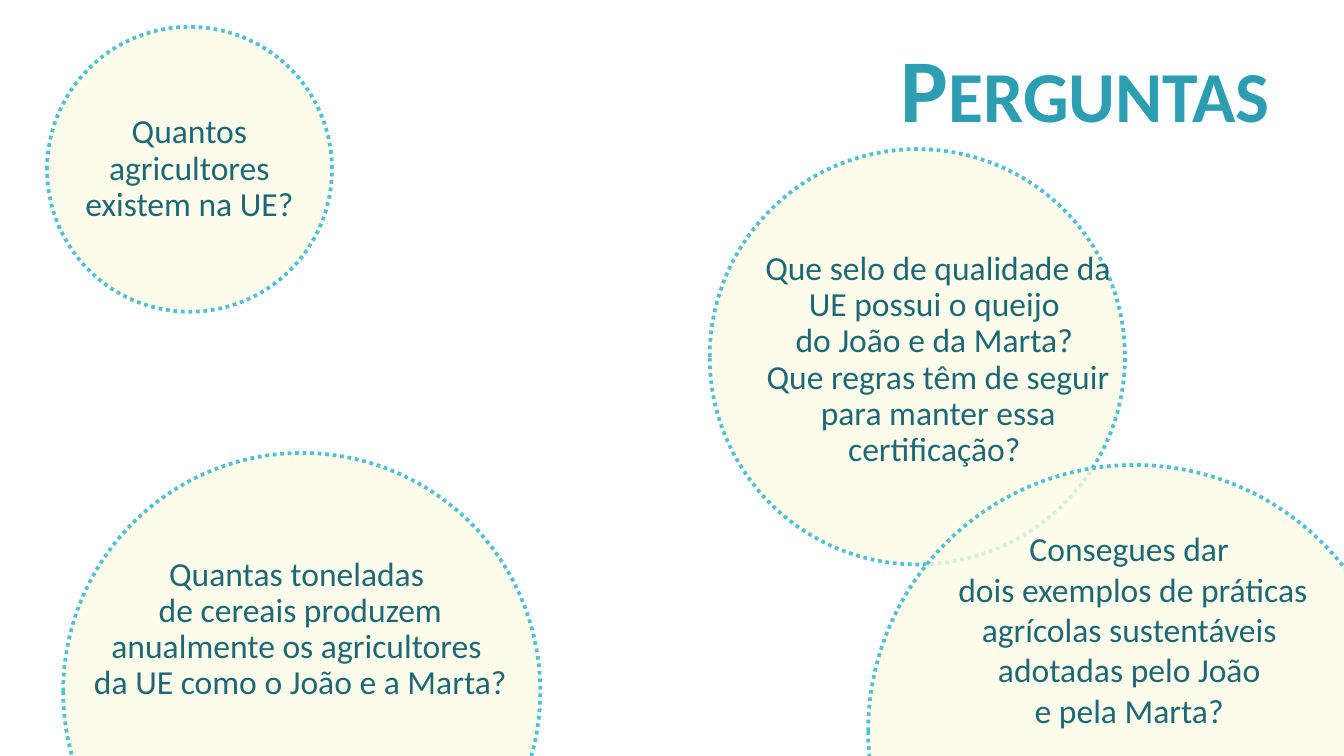
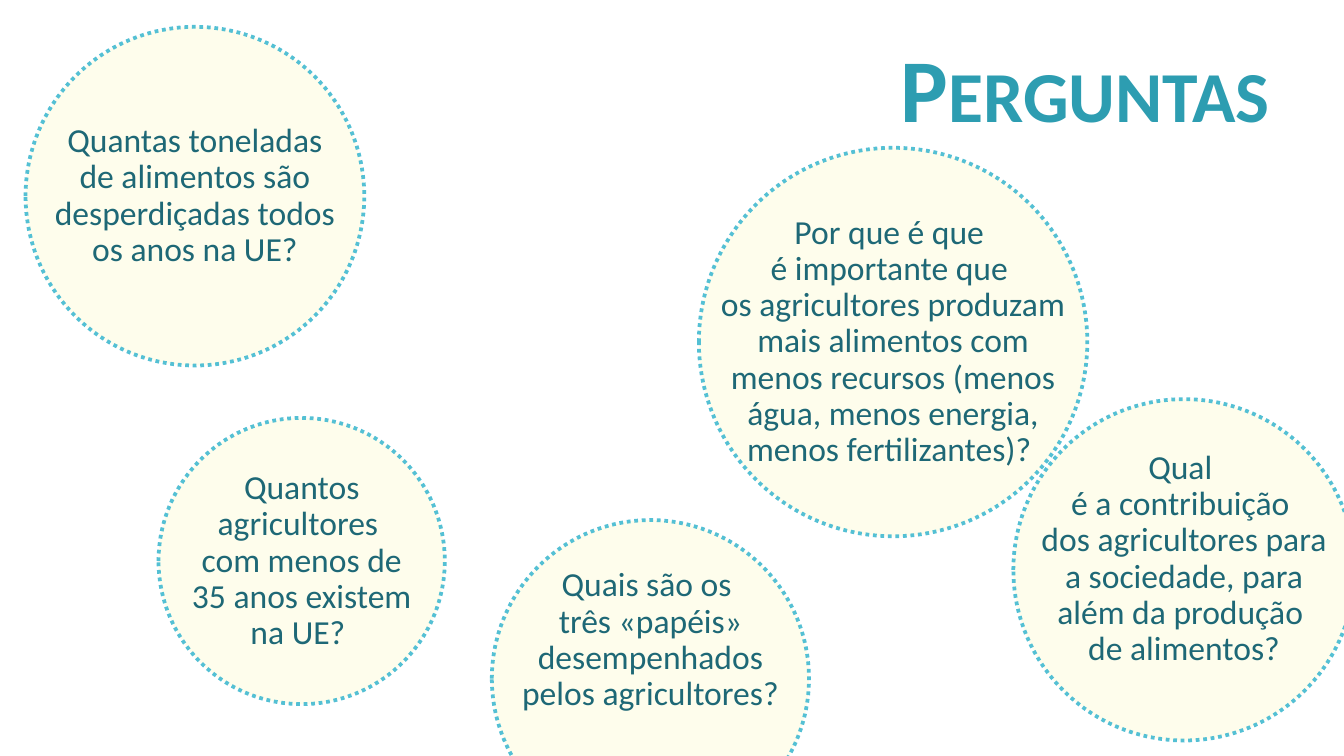
import dataclasses

import pptx
import pptx.dml.color
import pptx.enum.dml
import pptx.enum.shapes
import pptx.enum.text
import pptx.oxml
import pptx.oxml.ns
import pptx.util

ALIGN = pptx.enum.text.PP_ALIGN
ANCHOR = pptx.enum.text.MSO_ANCHOR
AUTO_SIZE = pptx.enum.text.MSO_AUTO_SIZE

# Grid: 100 columns by 56.25 rows, so that cells are square
COLUMNS, ROWS = 100, 56.25


@dataclasses.dataclass(frozen=True)
class Theme:
    font: str = "Calibri"
    heading: str = "2D9DB1"
    question: str = "1E6876"
    bubble: str = "FEFDE6"
    outline: str = "54C0D4"
    background: str = "FFFFFF"
    heading_size: int = 48
    question_size: int = 18
    outline_width: int = 2
    bubble_opacity: int = 75
    heading_spacing: float = 0.7
    question_spacing: float = 0.9
    line_rows: float = 3.04  # height of one text line at single spacing


def rgb(colour):
    return pptx.dml.color.RGBColor.from_string(colour)


def apply(target, values):
    for name, value in values.items():
        setattr(target, name, value)


class Deck:
    def __init__(self, theme):
        self.theme = theme
        self.presentation = pptx.Presentation()
        apply(self.presentation, {"slide_width": pptx.util.Inches(10),
                                  "slide_height": pptx.util.Inches(5.625)})
        self.column = self.presentation.slide_width / COLUMNS
        self.row = self.presentation.slide_height / ROWS
        self.slide = None

    def box(self, left, top, width, height):
        return (round(left * self.column), round(top * self.row),
                round(width * self.column), round(height * self.row))

    def fill_text(self, frame, text, frame_format, paragraph_format, size, colour, bold):
        """Put one formatted paragraph into a text frame."""
        apply(frame, frame_format)
        paragraph = frame.paragraphs[0]
        paragraph.text = text
        apply(paragraph, paragraph_format)
        for run in paragraph.runs:
            apply(run.font, {"name": self.theme.font, "size": pptx.util.Pt(size),
                             "bold": bold})
            run.font.color.rgb = rgb(colour)
        return paragraph

    def add_slide(self, heading):
        theme = self.theme
        self.slide = self.presentation.slides.add_slide(self.presentation.slide_layouts[5])
        fill = self.slide.background.fill
        fill.solid()
        fill.fore_color.rgb = rgb(theme.background)

        title = self.slide.shapes.title
        apply(title, dict(zip(("left", "top", "width", "height"),
                              self.box(55.3, 2, 40.2, 10.9))))
        paragraph = self.fill_text(
            title.text_frame, heading,
            {"word_wrap": True, "auto_size": AUTO_SIZE.NONE,
             "vertical_anchor": ANCHOR.MIDDLE},
            {"alignment": ALIGN.RIGHT, "line_spacing": theme.heading_spacing},
            theme.heading_size, theme.heading, True)
        for run in paragraph.runs:
            run._r.get_or_add_rPr().set("cap", "small")

    def add_bubble(self, left, top, diameter):
        theme = self.theme
        bubble = self.slide.shapes.add_shape(
            pptx.enum.shapes.MSO_SHAPE.OVAL, *self.box(left, top, diameter, diameter))
        bubble.shadow.inherit = False
        bubble.fill.solid()
        bubble.fill.fore_color.rgb = rgb(theme.bubble)
        colour = bubble.fill._xPr.find(".//" + pptx.oxml.ns.qn("a:srgbClr"))
        alpha = pptx.oxml.parse_xml(
            f'<a:alpha {pptx.oxml.ns.nsdecls("a")} val="{theme.bubble_opacity * 1000}"/>')
        colour.append(alpha)
        bubble.line.color.rgb = rgb(theme.outline)
        apply(bubble.line, {"width": pptx.util.Pt(theme.outline_width),
                            "dash_style": pptx.enum.dml.MSO_LINE.ROUND_DOT})

    def add_question(self, text, circle, width, lines, shift=(0, 0), spacing=None):
        """Draw a bubble with its question centred on it, moved by shift."""
        theme = self.theme
        spacing = spacing or theme.question_spacing
        left, top, diameter = circle
        self.add_bubble(*circle)
        height = 1 + lines * theme.line_rows * spacing
        question = self.slide.shapes.add_textbox(*self.box(
            left + (diameter - width) / 2 + shift[0],
            top + (diameter - height) / 2 + shift[1], width, height))
        self.fill_text(
            question.text_frame, text,
            {"word_wrap": True, "auto_size": AUTO_SIZE.SHAPE_TO_FIT_TEXT,
             "vertical_anchor": ANCHOR.MIDDLE},
            {"alignment": ALIGN.CENTER, "line_spacing": spacing},
            theme.question_size, theme.question, False)


# Questions per slide: circle is left, top and diameter in grid cells
SLIDES = [
    [
        dict(text="Quantas toneladas \nde cereais produzem anualmente os agricultores \n"
                  "da UE como o João e a Marta? ",
             circle=(4.7, 33.7, 35.5), width=32.9, lines=4, shift=(-0.1, -4.6)),
        dict(text="Que selo de qualidade da UE possui o queijo \ndo João e da Marta? \n"
                  "Que regras têm de seguir para manter essa certificação? ",
             circle=(52.8, 11.1, 30.9), width=27.8, lines=6, shift=(1.55, 0.25)),
        dict(text="Quantos agricultores existem na UE?",
             circle=(3.5, 2, 21.2), width=18, lines=3),
        dict(text="Consegues dar \ndois exemplos de práticas agrícolas sustentáveis \n"
                  "adotadas pelo João \ne pela Marta? ",
             circle=(64.6, 34.6, 39.6), width=29.2, lines=5, shift=(-0.1, -7.6),
             spacing=1.0),
    ],
    [
        dict(text="Quantas toneladas de alimentos são desperdiçadas todos os anos na UE?",
             circle=(1.9, 2, 25.2), width=22.9, lines=4),
        dict(text="Quantos agricultores \ncom menos de 35 anos existem na UE? ",
             circle=(11.8, 31.1, 21.3), width=19.1, lines=5),
        dict(text="Por que é que \né importante que \nos agricultores produzam mais "
                  "alimentos com menos recursos (menos água, menos energia, "
                  "menos fertilizantes)? ",
             circle=(52, 11, 28.9), width=28.9, lines=7),
        dict(text="Quais são os \ntrês «papéis» desempenhados pelos agricultores? ",
             circle=(36.6, 38.7, 23.6), width=21.3, lines=4, shift=(0, -2.85)),
        dict(text="Qual \né a contribuição \ndos agricultores para a sociedade, para "
                  "além da produção \nde alimentos?",
             circle=(75.4, 29.7, 25.4), width=23.9, lines=6, shift=(0, -0.8)),
    ],
]


def main():
    deck = Deck(Theme())
    for questions in SLIDES:
        deck.add_slide("Perguntas")
        for question in questions:
            deck.add_question(**question)
    deck.presentation.save("out.pptx")


if __name__ == "__main__":
    main()
